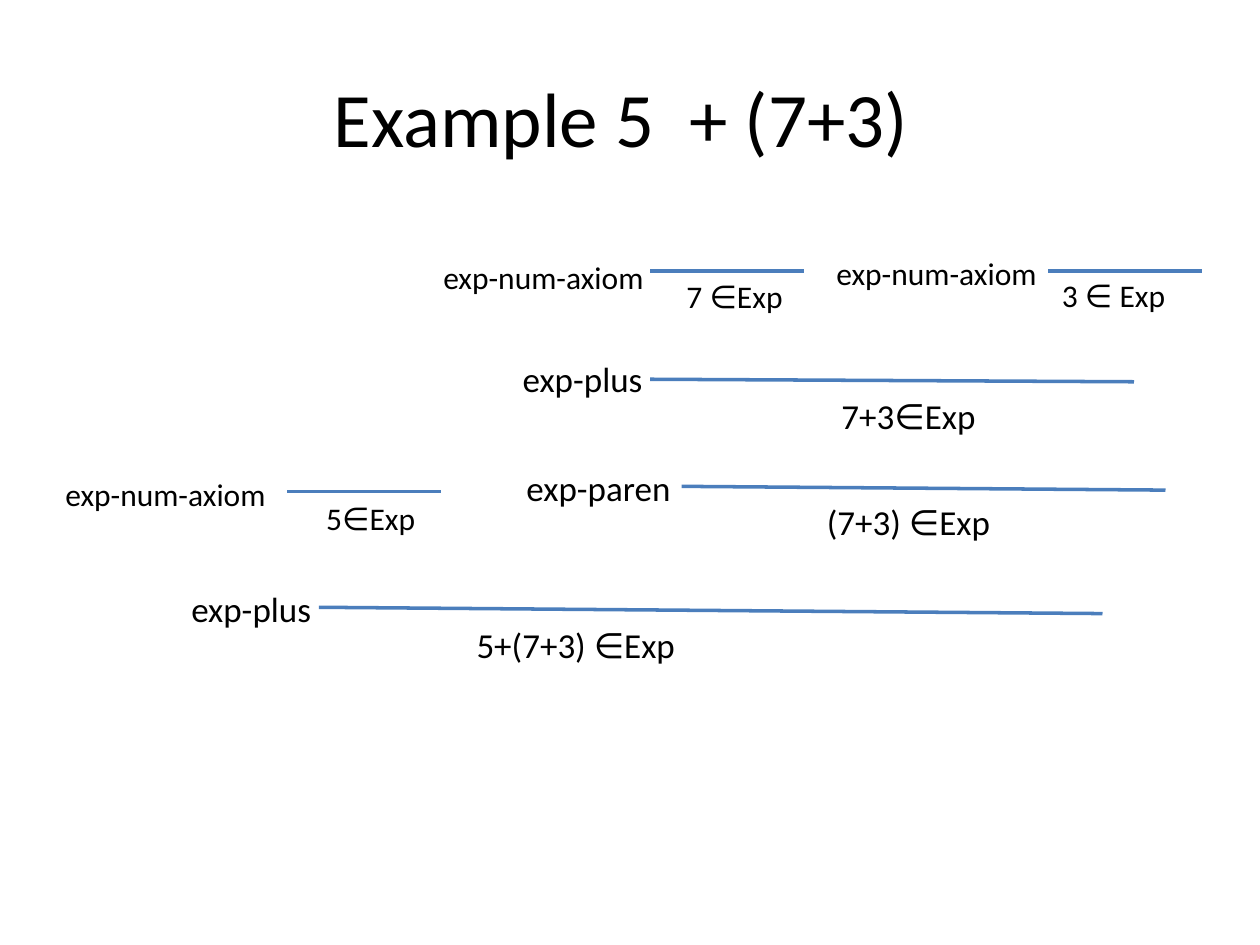
"""Build a slide showing the derivation tree of 5 + (7+3) as inference rules."""
from lxml.etree import SubElement
from pptx import Presentation
from pptx.dml.color import RGBColor
from pptx.enum.shapes import MSO_CONNECTOR
from pptx.enum.text import MSO_ANCHOR, PP_ALIGN
from pptx.oxml.ns import qn
from pptx.util import Inches, Pt

BLACK = RGBColor(0x00, 0x00, 0x00)
BLUE = RGBColor(0x4B, 0x7E, 0xBC)
WHITE = RGBColor(0xFF, 0xFF, 0xFF)
FONT = "Calibri"

TITLE = "Example 5  + (7+3) "
AXIOM = {"size": 18, "height": 0.4, "width": 1.56, "align": PP_ALIGN.LEFT}
RULE = {"size": 20, "height": 0.44, "width": 2.08, "align": PP_ALIGN.CENTER}

# name, style, name box (left, top, width), bar (x1, y1, x2, y2), conclusion, its (left, top)
STEPS = [
    ("exp-num-axiom", AXIOM, (0.42, 3.72, 2.01), (2.28, 3.9, 3.5, 3.9), "5∈Exp", (2.49, 3.91)),
    ("exp-num-axiom", AXIOM, (3.42, 2, 1.97), (5.16, 2.15, 6.38, 2.15), "7 ∈Exp", (5.35, 2.15)),
    ("exp-num-axiom", AXIOM, (6.54, 1.97, 1.94), (8.32, 2.15, 9.54, 2.15), "3 ∈ Exp", (8.33, 2.14)),
    ("exp-plus", RULE, (4.05, 2.79, 1.33), (5.16, 3.01, 9, 3.03), "7+3∈Exp", (6.17, 3.08)),
    ("exp-paren", RULE, (4.08, 3.65, 1.68), (5.41, 3.86, 9.25, 3.89), "(7+3) ∈Exp", (6.17, 3.92)),
    ("exp-plus", RULE, (1.42, 4.61, 1.33), (2.53, 4.82, 8.75, 4.87), "5+(7+3) ∈Exp", (3.53, 4.9)),
]


def write(shape, text, size, align=PP_ALIGN.LEFT, anchor=MSO_ANCHOR.TOP):
    """Fill a shape with one formatted paragraph."""
    tf = shape.text_frame
    tf.word_wrap = True
    tf.vertical_anchor = anchor
    p = tf.paragraphs[0]
    p.alignment = align
    r = p.add_run()
    r.text = text
    r.font.name = FONT
    r.font.size = Pt(size)
    r.font.color.rgb = BLACK


def add_bar(s, ends):
    """Draw an inference bar without a shadow."""
    bar = s.shapes.add_connector(MSO_CONNECTOR.STRAIGHT, *map(Inches, ends))
    bar.line.color.rgb = BLUE
    bar.line.width = Pt(2)
    SubElement(bar._element.spPr, qn("a:effectLst"))


def add_step(s, name, style, name_box, bar, conclusion, spot):
    """Draw one inference step: bar, rule name and conclusion."""
    add_bar(s, bar)
    size, height = style["size"], style["height"]
    label = s.shapes.add_textbox(*map(Inches, (*name_box, height)))
    write(label, name, size)
    result = s.shapes.add_textbox(*map(Inches, (*spot, style["width"], height)))
    write(result, conclusion, size, align=style["align"])


def main():
    """Assemble and save the slide."""
    prs = Presentation()
    prs.slide_width, prs.slide_height = Inches(10), Inches(7.5)
    s = prs.slides.add_slide(prs.slide_layouts[5])
    s.background.fill.solid()
    s.background.fill.fore_color.rgb = WHITE

    title = s.shapes.title
    title.left, title.top, title.width, title.height = map(Inches, (0.5, 0.3, 9, 1.25))
    write(title, TITLE, 44, align=PP_ALIGN.CENTER, anchor=MSO_ANCHOR.MIDDLE)

    for step in STEPS:
        add_step(s, *step)
    prs.save("out.pptx")


if __name__ == "__main__":
    main()
